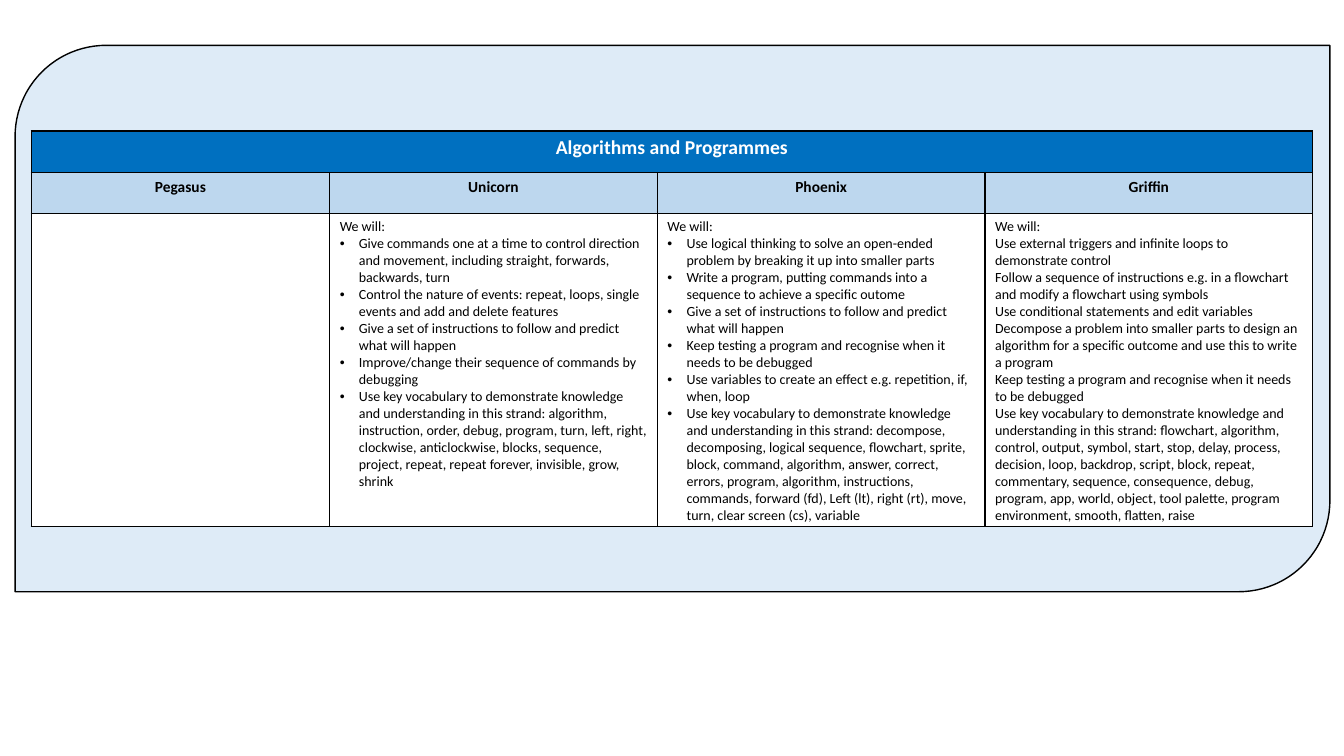
from lxml.etree import SubElement
from pptx import Presentation
from pptx.dml.color import RGBColor
from pptx.enum.shapes import MSO_SHAPE as Shape
from pptx.enum.text import PP_ALIGN as Align
from pptx.oxml.ns import qn
from pptx.util import Inches, Pt

COLOURS = {
    "panel": "DEEBF7",
    "title": "0070C0",
    "class": "BDD7EE",
    "body": "FFFFFF",
    "light_text": "FFFFFF",
    "text": "000000",
    "border": "000000",
}
FONT = "Calibri"
TITLE = "Algorithms and Programmes"
COLUMN_WIDTHS = [2.96, 3.25, 3.25, 3.25]
ROW_HEIGHTS = [0.41, 0.41, 3.1]
BULLET_INDENT = Inches(0.19)

# Class name, whether its goals are bulleted, and the goals
CLASSES = [
    ("Pegasus", False, []),
    ("Unicorn", True, [
        "Give commands one at a time to control direction and movement, "
        "including straight, forwards, backwards, turn",
        "Control the nature of events: repeat, loops, single events and add "
        "and delete features",
        "Give a set of instructions to follow and predict what will happen",
        "Improve/change their sequence of commands by debugging",
        "Use key vocabulary to demonstrate knowledge and understanding in "
        "this strand: algorithm, instruction, order, debug, program, turn, "
        "left, right, clockwise, anticlockwise, blocks, sequence, project, "
        "repeat, repeat forever, invisible, grow, shrink",
    ]),
    ("Phoenix", True, [
        "Use logical thinking to solve an open-ended problem by breaking it "
        "up into smaller parts",
        "Write a program, putting commands into a sequence to achieve a "
        "specific outome",
        "Give a set of instructions to follow and predict what will happen",
        "Keep testing a program and recognise when it needs to be debugged",
        "Use variables to create an effect e.g. repetition, if, when, loop",
        "Use key vocabulary to demonstrate knowledge and understanding in "
        "this strand: decompose, decomposing, logical sequence, flowchart, "
        "sprite, block, command, algorithm, answer, correct, errors, program, "
        "algorithm, instructions, commands, forward (fd), Left (lt), right "
        "(rt), move, turn, clear screen (cs), variable",
    ]),
    ("Griffin", False, [
        "Use external triggers and infinite loops to demonstrate control",
        "Follow a sequence of instructions e.g. in a flowchart and modify a "
        "flowchart using symbols",
        "Use conditional statements and edit variables",
        "Decompose a problem into smaller parts to design an algorithm for a "
        "specific outcome and use this to write a program",
        "Keep testing a program and recognise when it needs to be debugged",
        "Use key vocabulary to demonstrate knowledge and understanding in "
        "this strand: flowchart, algorithm, control, output, symbol, start, "
        "stop, delay, process, decision, loop, backdrop, script, block, "
        "repeat, commentary, sequence, consequence, debug, program, app, "
        "world, object, tool palette, program environment, smooth, flatten, "
        "raise",
    ]),
]


def colour(name):
    return RGBColor.from_string(COLOURS[name])


def add_panel(slide):
    panel = slide.shapes.add_shape(
        Shape.ROUND_2_DIAG_RECTANGLE,
        Inches(0.15), Inches(0.45), Inches(13.04), Inches(5.42))
    panel.shadow.inherit = False
    panel.fill.solid()
    panel.fill.fore_color.rgb = colour("panel")
    panel.line.color.rgb = colour("border")
    panel.line.width = Pt(1)


def style_cell(cell, fill):
    cell.margin_left = cell.margin_right = Inches(0.1)
    cell.margin_top = Inches(0.05)
    cell.margin_bottom = 0
    # Borders come before the fill in the cell properties
    properties = cell._tc.get_or_add_tcPr()
    for side in ("a:lnL", "a:lnR", "a:lnT", "a:lnB"):
        border = SubElement(properties, qn(side), w=str(Pt(1)))
        solid = SubElement(border, qn("a:solidFill"))
        SubElement(solid, qn("a:srgbClr"), val=COLOURS["border"])
    cell.fill.solid()
    cell.fill.fore_color.rgb = colour(fill)


def add_text(paragraph, text, size, bold=False, text_colour="text", align=Align.LEFT):
    paragraph.alignment = align
    run = paragraph.add_run()
    run.text = text
    run.font.name = FONT
    run.font.size = Pt(size)
    run.font.bold = bold
    run.font.color.rgb = colour(text_colour)


def add_bullet(paragraph):
    properties = paragraph._p.get_or_add_pPr()
    properties.set("marL", str(BULLET_INDENT))
    properties.set("indent", str(-BULLET_INDENT))
    SubElement(properties, qn("a:buFont"), typeface="Arial")
    SubElement(properties, qn("a:buChar"), char="•")


def fill_goals(cell, goals, bulleted):
    if not goals:
        return
    frame = cell.text_frame
    add_text(frame.paragraphs[0], "We will:", 10)
    for goal in goals:
        paragraph = frame.add_paragraph()
        add_text(paragraph, goal, 10)
        if bulleted:
            add_bullet(paragraph)


def add_curriculum(slide):
    curriculum = slide.shapes.add_table(
        len(ROW_HEIGHTS), len(COLUMN_WIDTHS), Inches(0.31), Inches(1.3),
        Inches(sum(COLUMN_WIDTHS)), Inches(sum(ROW_HEIGHTS))).table
    for column, width in zip(curriculum.columns, COLUMN_WIDTHS):
        column.width = Inches(width)
    for row, height, fill in zip(curriculum.rows, ROW_HEIGHTS, ("title", "class", "body")):
        row.height = Inches(height)
        for cell in row.cells:
            style_cell(cell, fill)

    # Title row across all columns
    heading = curriculum.cell(0, 0)
    heading.merge(curriculum.cell(0, len(COLUMN_WIDTHS) - 1))
    add_text(heading.text_frame.paragraphs[0], TITLE, 14, True, "light_text", Align.CENTER)

    # One column per class
    for index, (name, bulleted, goals) in enumerate(CLASSES):
        class_name = curriculum.cell(1, index).text_frame.paragraphs[0]
        add_text(class_name, name, 11, bold=True, align=Align.CENTER)
        fill_goals(curriculum.cell(2, index), goals, bulleted)


def main():
    deck = Presentation()
    deck.slide_width = Inches(13.33)
    deck.slide_height = Inches(7.5)
    slide = deck.slides.add_slide(deck.slide_layouts[6])
    add_panel(slide)
    add_curriculum(slide)
    deck.save("out.pptx")


if __name__ == "__main__":
    main()
